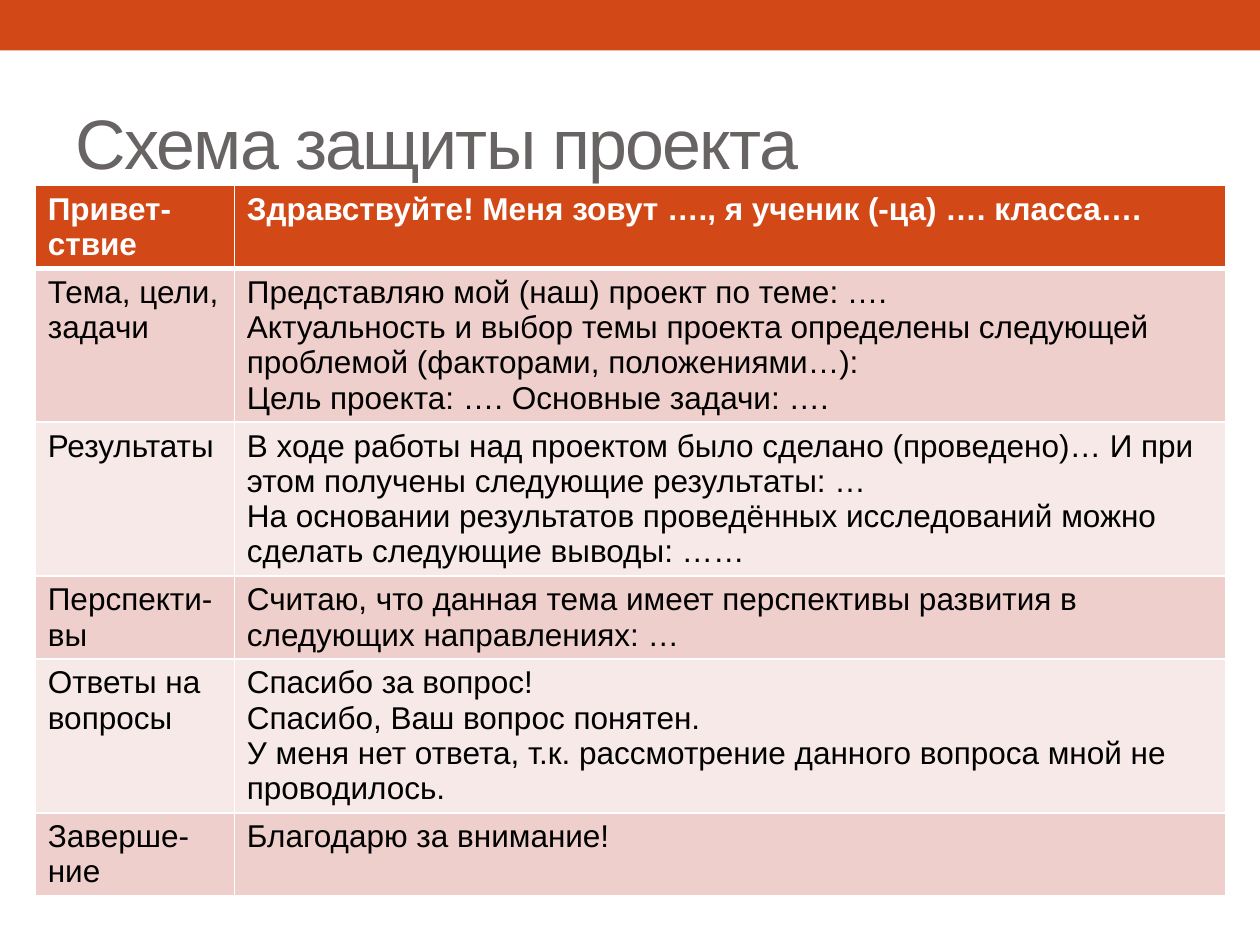
from dataclasses import dataclass

from lxml import etree
from pptx import Presentation
from pptx import util as u
from pptx.dml.color import RGBColor
from pptx.enum import shapes, text
from pptx.oxml.ns import qn


@dataclass(frozen=True)
class Theme:
    font: str = "Arial"
    accent: str = "D34817"
    title: str = "696464"
    ink: str = "000000"
    white: str = "FFFFFF"
    bands: tuple = ("F7E9E8", "EFCFCC")
    head_size: int = 40
    cell_size: int = 18


theme = Theme()


def style(font, size, color, bold=False):
    font.name = theme.font
    font.size = u.Pt(size)
    font.bold = bold
    font.color.rgb = RGBColor.from_string(color)


def edge(cell, side, width):
    """Draw one white border of a cell; call before the cell's fill is set."""
    line = etree.SubElement(cell._tc.get_or_add_tcPr(), qn(f"a:ln{side}"), w=str(u.Pt(width)))
    fill = etree.SubElement(line, qn("a:solidFill"))
    etree.SubElement(fill, qn("a:srgbClr"), val=theme.white)


# Label, speech (one line per paragraph), row height in inches
rows = [
    ("Привет-ствие", "Здравствуйте! Меня зовут …., я ученик (-ца) …. класса….", 0.65),
    ("Тема, цели, задачи",
     "Представляю мой (наш) проект по теме: ….\n"
     "Актуальность и выбор темы проекта определены следующей проблемой "
     "(факторами, положениями…):\n"
     "Цель проекта: …. Основные задачи: ….", 1.22),
    ("Результаты",
     "В ходе работы над проектом было сделано (проведено)… "
     "И при этом получены следующие результаты: …\n"
     "На основании результатов проведённых исследований можно "
     "сделать следующие выводы: ……", 1.22),
    ("Перспекти-вы",
     "Считаю, что данная тема имеет перспективы развития в следующих направлениях: …", 0.65),
    ("Ответы на вопросы",
     "Спасибо за вопрос!\n"
     "Спасибо, Ваш вопрос понятен.\n"
     "У меня нет ответа, т.к. рассмотрение данного вопроса мной не проводилось.", 1.22),
    ("Заверше-ние", "Благодарю за внимание!", 0.65),
]
widths = (1.58, 7.87)

deck = Presentation()
deck.slide_width, deck.slide_height = u.Inches(10), u.Inches(7.5)
slide = deck.slides.add_slide(deck.slide_layouts[5])

# Top band
band = slide.shapes.add_shape(shapes.MSO_SHAPE.RECTANGLE, 0, 0, deck.slide_width, u.Inches(0.4))
band.shadow.inherit = False
band.fill.solid()
band.fill.fore_color.rgb = RGBColor.from_string(theme.accent)
band.line.fill.background()

# Title
title = slide.shapes.title
title.left, title.top = u.Inches(0.5), u.Inches(0.58)
title.width, title.height = u.Inches(9), u.Inches(1.08)
title.text_frame.text = "Схема защиты проекта"
title.text_frame.vertical_anchor = text.MSO_ANCHOR.MIDDLE
para = title.text_frame.paragraphs[0]
para.alignment = text.PP_ALIGN.LEFT
style(para.font, theme.head_size, theme.title)
para.runs[0].font._element.set("spc", "-100")

# Table
frame = slide.shapes.add_table(
    len(rows), len(widths), u.Inches(0.28), u.Inches(1.47),
    u.Inches(sum(widths)), u.Inches(sum(row[2] for row in rows)))
table = frame.table
for col, width in zip(table.columns, widths):
    col.width = u.Inches(width)

for r, (label, speech, height) in enumerate(rows):
    table.rows[r].height = u.Inches(height)
    head = r == 0
    for c, words in enumerate((label, speech)):
        cell = table.cell(r, c)
        for side in "LRTB":
            thick = (head and side == "B") or (r == 1 and side == "T")
            edge(cell, side, 3 if thick else 1)
        cell.fill.solid()
        cell.fill.fore_color.rgb = RGBColor.from_string(
            theme.accent if head else theme.bands[r % 2])
        cell.text_frame.text = words
        for para in cell.text_frame.paragraphs:
            style(para.font, theme.cell_size, theme.white if head else theme.ink, head)

deck.save("out.pptx")
